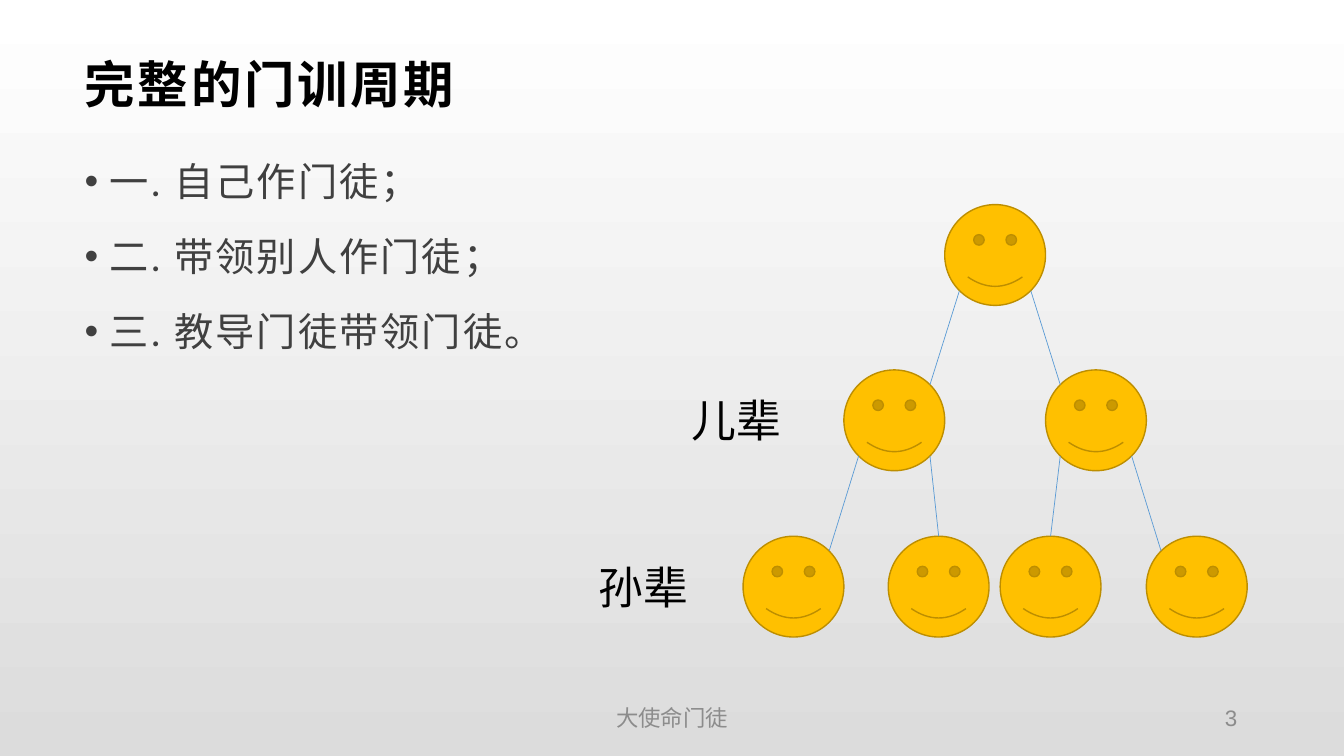
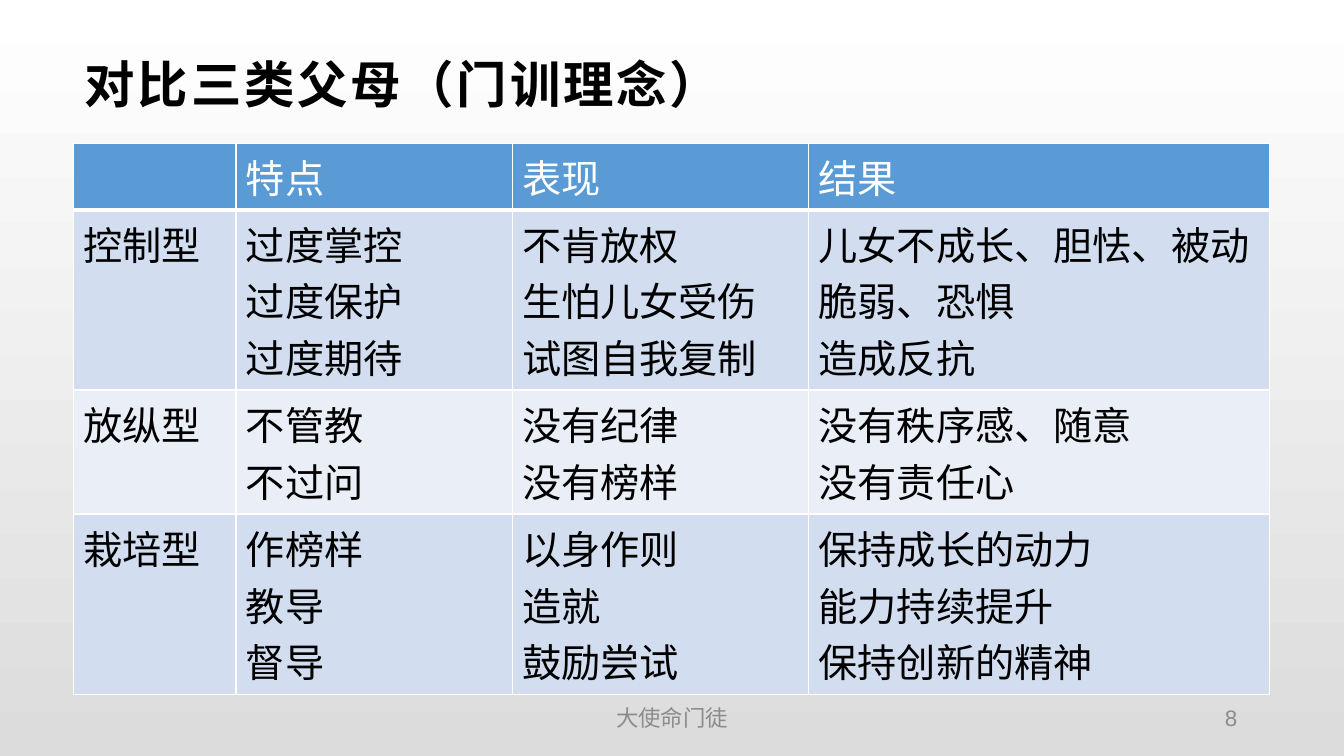
from dataclasses import dataclass
from typing import NamedTuple

from lxml import etree
from pptx import Presentation
from pptx import util as u
from pptx.dml.color import RGBColor
from pptx.enum import shapes, text
from pptx.oxml.ns import qn


# Theme and shared records
class Frame(NamedTuple):
    left: float
    top: float
    width: float
    height: float

    def inches(self) -> list:
        return [u.Inches(value) for value in self]


@dataclass(frozen=True)
class TextStyle:
    size: float
    color: str
    font: str = "Lato"
    bold: bool = False
    tracking: float = 0


@dataclass(frozen=True)
class Theme:
    background: tuple = ("FFFFFF", "DCDCDC")
    face: str = "FFC000"
    face_line: str = "BD8E00"
    accent: str = "5B9BD5"
    bands: tuple = ("D2DEEF", "EAEFF7")
    border: str = "FFFFFF"
    title: TextStyle = TextStyle(36, "000000", bold=True, tracking=2)
    body: TextStyle = TextStyle(28, "404040", tracking=1.5)
    header: TextStyle = TextStyle(28, "FFFFFF")
    cell: TextStyle = TextStyle(28, "000000")
    label: TextStyle = TextStyle(32, "000000", "Arial")
    footer: TextStyle = TextStyle(16, "8C8C8C", "Arial")


class Face(NamedTuple):
    left: float
    top: float

    def site(self, name: str) -> tuple[float, float]:
        """Point on the rim of the face."""
        across, down = RIM_SITES[name]
        return self.left + across * FACE_SIZE, self.top + down * FACE_SIZE


class Link(NamedTuple):
    parent: str
    parent_site: str
    child: str
    child_site: str


class Label(NamedTuple):
    words: str
    left: float
    top: float


THEME = Theme()
TITLE_FRAME = Frame(0.73, 0.47, 11.87, 0.71)
CONTENT_FRAME = Frame(0.73, 1.42, 11.87, 5.51)
FOOTER_FRAME = Frame(4.5, 6.94, 4.33, 0.35)
NUMBER_FRAME = Frame(9.42, 6.94, 2.95, 0.35)
FOOTER = "大使命门徒"

FACE_SIZE = 1
RIM_SITES = {
    "top": (0.5, 0),
    "top left": (0.146, 0.146),
    "top right": (0.854, 0.146),
    "bottom left": (0.146, 0.854),
    "bottom right": (0.854, 0.854),
}

# Content of the discipleship tree
STEPS = ["一. 自己作门徒；", "二. 带领别人作门徒；", "三. 教导门徒带领门徒。"]
TIER_TOPS = (2.03, 3.67, 5.32)
FACES = {
    "root": Face(9.37, TIER_TOPS[0]),
    "child 1": Face(8.37, TIER_TOPS[1]),
    "child 2": Face(10.37, TIER_TOPS[1]),
    "grandchild 1": Face(7.37, TIER_TOPS[2]),
    "grandchild 2": Face(8.81, TIER_TOPS[2]),
    "grandchild 3": Face(9.92, TIER_TOPS[2]),
    "grandchild 4": Face(11.37, TIER_TOPS[2]),
}
LINKS = [
    Link("root", "bottom left", "child 1", "top right"),
    Link("root", "bottom right", "child 2", "top left"),
    Link("child 1", "bottom left", "grandchild 1", "top right"),
    Link("child 1", "bottom right", "grandchild 2", "top"),
    Link("child 2", "bottom left", "grandchild 3", "top"),
    Link("child 2", "bottom right", "grandchild 4", "top left"),
]
LABELS = [Label("儿辈", 6.76, 3.85), Label("孙辈", 5.84, 5.5)]

# Content of the parenting table
COLUMN_WIDTHS = (1.61, 2.74, 2.94, 4.57)
ROW_HEIGHTS = (0.66, 1.79, 1.23, 1.79)
PARENT_TYPES = [
    ("", "特点", "表现", "结果"),
    ("控制型", "过度掌控\n过度保护\n过度期待", "不肯放权\n生怕儿女受伤\n试图自我复制",
     "儿女不成长、胆怯、被动\n脆弱、恐惧\n造成反抗"),
    ("放纵型", "不管教\n不过问", "没有纪律\n没有榜样", "没有秩序感、随意\n没有责任心"),
    ("栽培型", "作榜样\n教导\n督导", "以身作则\n造就\n鼓励尝试",
     "保持成长的动力\n能力持续提升\n保持创新的精神"),
]


# Drawing helpers
def rgb(color: str) -> RGBColor:
    return RGBColor.from_string(color)


def write(frame, words: str, style: TextStyle, align=text.PP_ALIGN.LEFT) -> None:
    frame.text = words
    for para in frame.paragraphs:
        para.alignment = align
        for span in para.runs:
            span.font.name = style.font
            span.font.size = u.Pt(style.size)
            span.font.bold = style.bold
            span.font.color.rgb = rgb(style.color)
            if style.tracking:
                span._r.get_or_add_rPr().set("spc", str(int(style.tracking * 100)))


def set_margins(frame, left: float, top: float, right: float, bottom: float) -> None:
    frame.margin_left, frame.margin_top = u.Inches(left), u.Inches(top)
    frame.margin_right, frame.margin_bottom = u.Inches(right), u.Inches(bottom)


def add_text(page, place: Frame, words: str, style: TextStyle,
             align=text.PP_ALIGN.LEFT, anchor=text.MSO_ANCHOR.TOP):
    frame = page.shapes.add_textbox(*place.inches()).text_frame
    frame.word_wrap = True
    frame.vertical_anchor = anchor
    write(frame, words, style, align)
    return frame


def add_bullet(para) -> None:
    properties = para._p.get_or_add_pPr()
    properties.set("marL", str(u.Inches(0.25)))
    properties.set("indent", str(-u.Inches(0.25)))
    etree.SubElement(properties, qn("a:buFont"), typeface="Arial")
    etree.SubElement(properties, qn("a:buChar"), char="•")


def add_face(page, face: Face) -> None:
    place = Frame(face.left, face.top, FACE_SIZE, FACE_SIZE)
    smiley = page.shapes.add_shape(shapes.MSO_SHAPE.SMILEY_FACE, *place.inches())
    smiley.shadow.inherit = False
    smiley.fill.solid()
    smiley.fill.fore_color.rgb = rgb(THEME.face)
    smiley.line.color.rgb = rgb(THEME.face_line)
    smiley.line.width = u.Pt(1)


def add_link(page, link: Link) -> None:
    start = FACES[link.parent].site(link.parent_site)
    end = FACES[link.child].site(link.child_site)
    line = page.shapes.add_connector(
        shapes.MSO_CONNECTOR.STRAIGHT, *[u.Inches(value) for value in start + end])
    line.line.color.rgb = rgb(THEME.accent)
    line.line.width = u.Pt(0.5)
    etree.SubElement(line._element.spPr, qn("a:effectLst"))


def add_borders(cell, bottom_width: float) -> None:
    properties = cell._tc.get_or_add_tcPr()
    widths = {"a:lnL": 1, "a:lnR": 1, "a:lnT": 1, "a:lnB": bottom_width}
    for position, (tag, width) in enumerate(widths.items()):
        border = etree.Element(qn(tag), w=str(u.Pt(width)))
        fill = etree.SubElement(border, qn("a:solidFill"))
        etree.SubElement(fill, qn("a:srgbClr"), val=THEME.border)
        properties.insert(position, border)


def add_page(deck, title: str, number: int):
    """Title-only slide with the shared title, slide number and footer."""
    page = deck.slides.add_slide(deck.slide_layouts.get_by_name("Title Only"))
    box = page.shapes.title
    box.left, box.top, box.width, box.height = TITLE_FRAME.inches()
    frame = box.text_frame
    frame.auto_size = text.MSO_AUTO_SIZE.NONE
    frame.vertical_anchor = text.MSO_ANCHOR.MIDDLE
    set_margins(frame, 0.11, 0.04, 0.08, 0.04)
    write(frame, title, THEME.title)
    middle = text.MSO_ANCHOR.MIDDLE
    add_text(page, NUMBER_FRAME, str(number), THEME.footer, text.PP_ALIGN.RIGHT, middle)
    add_text(page, FOOTER_FRAME, FOOTER, THEME.footer, text.PP_ALIGN.CENTER, middle)
    return page


# Slides
def build_cycle(deck) -> None:
    page = add_page(deck, "完整的门训周期", 3)
    steps = add_text(page, CONTENT_FRAME, "\n".join(STEPS), THEME.body)
    set_margins(steps, 0.11, 0, 0.09, 0)
    for para in steps.paragraphs:
        para.line_spacing = 1.3
        para.space_after = u.Pt(10)
        add_bullet(para)
    for face in FACES.values():
        add_face(page, face)
    for link in LINKS:
        add_link(page, link)
    for label in LABELS:
        place = Frame(label.left, label.top, 1.09, 0.64)
        frame = add_text(page, place, label.words, THEME.label)
        frame.word_wrap = False
        frame.auto_size = text.MSO_AUTO_SIZE.SHAPE_TO_FIT_TEXT


def build_comparison(deck) -> None:
    page = add_page(deck, "对比三类父母（门训理念）", 8)
    place = CONTENT_FRAME._replace(height=sum(ROW_HEIGHTS))
    table = page.shapes.add_table(
        len(ROW_HEIGHTS), len(COLUMN_WIDTHS), *place.inches()).table
    table.horz_banding = False
    for column, width in zip(table.columns, COLUMN_WIDTHS):
        column.width = u.Inches(width)
    for index, (row, height) in enumerate(zip(table.rows, ROW_HEIGHTS)):
        row.height = u.Inches(height)
        is_header = index == 0
        fill = THEME.accent if is_header else THEME.bands[(index - 1) % 2]
        style = THEME.header if is_header else THEME.cell
        for cell, words in zip(row.cells, PARENT_TYPES[index]):
            write(cell.text_frame, words, style)
            cell.fill.solid()
            cell.fill.fore_color.rgb = rgb(fill)
            add_borders(cell, 3 if is_header else 1)


def main() -> None:
    deck = Presentation()
    deck.slide_width, deck.slide_height = u.Inches(13.33), u.Inches(7.5)
    backdrop = deck.slide_master.background.fill
    backdrop.gradient()
    backdrop.gradient_angle = 270
    for stop, color in zip(backdrop.gradient_stops, THEME.background):
        stop.color.rgb = rgb(color)
    build_cycle(deck)
    build_comparison(deck)
    deck.save("out.pptx")


if __name__ == "__main__":
    main()
